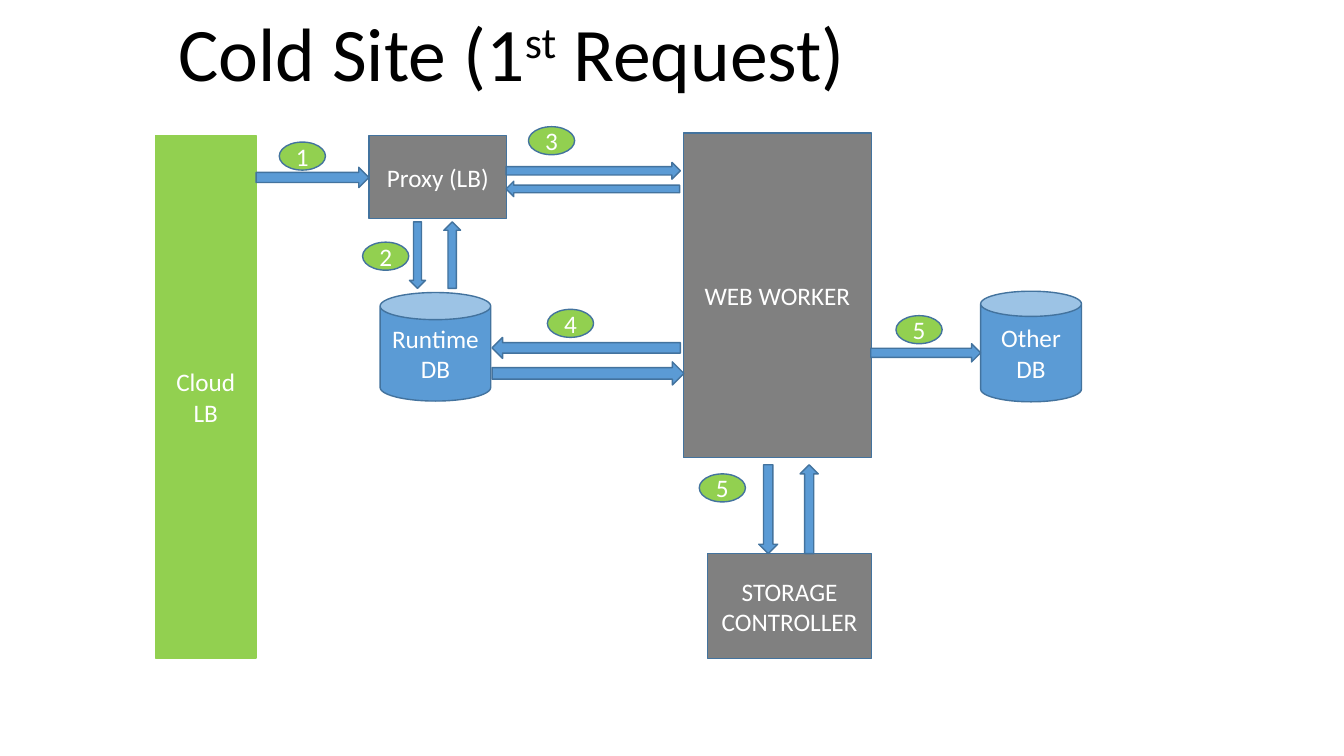
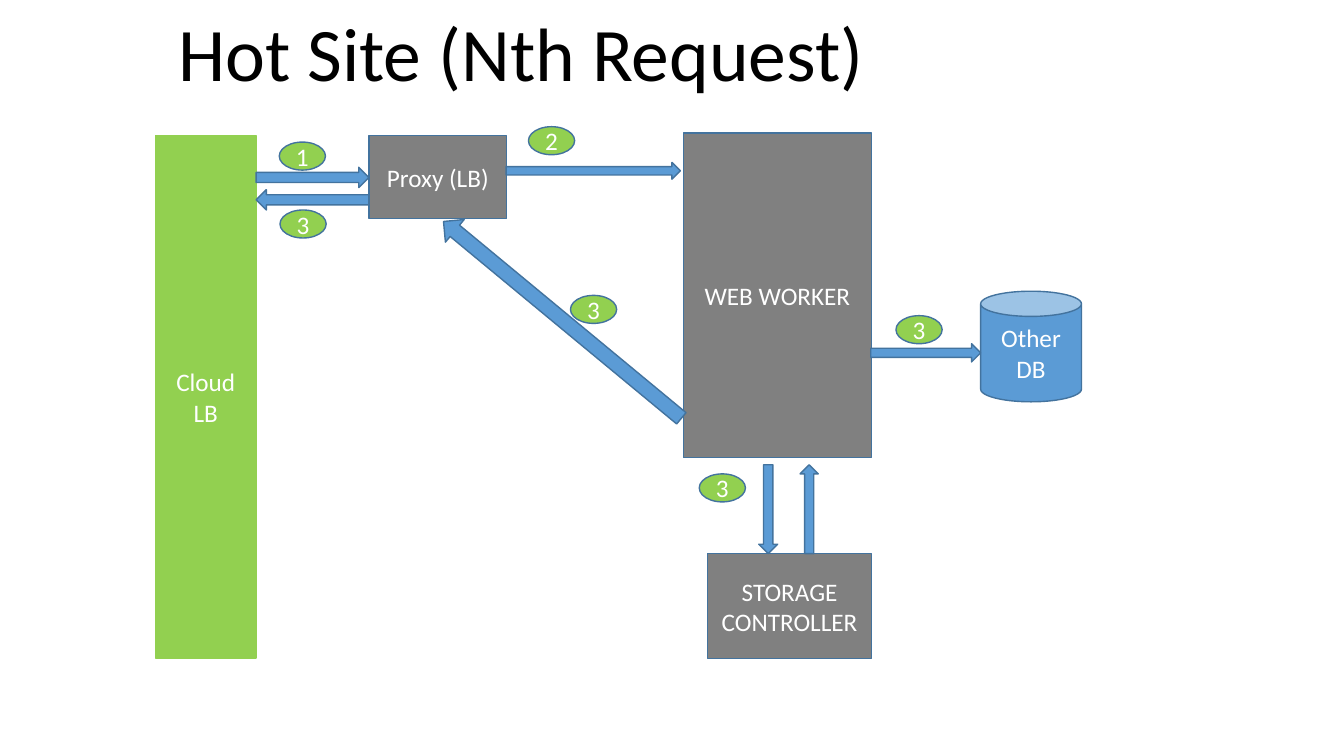
from pptx import Presentation
from pptx.dml.color import RGBColor
from pptx.enum.shapes import MSO_SHAPE
from pptx.enum.text import MSO_ANCHOR, MSO_AUTO_SIZE, PP_ALIGN
from pptx.util import Pt

# Shared look
FONT = "Calibri"
GREEN, GRAY, BLUE, OUTLINE = "92D050", "808080", "5B9BD5", "43739E"
WHITE, BLACK = "FFFFFF", "000000"
TITLE_PLACE = (120, 29.5, 526.5, 44)
BADGE_SIZE = (33, 20)
RIGHT, LEFT = MSO_SHAPE.RIGHT_ARROW, MSO_SHAPE.LEFT_ARROW
UP, DOWN = MSO_SHAPE.UP_ARROW, MSO_SHAPE.DOWN_ARROW

# Blocks: preset, fill, outline, place, text
SHARED_BLOCKS = [
    (MSO_SHAPE.RECTANGLE, GREEN, GREEN, (111, 97, 72, 373), "Cloud\nLB"),
    (MSO_SHAPE.RECTANGLE, GRAY, OUTLINE, (263.5, 97, 98.5, 59), "Proxy (LB)"),
    (MSO_SHAPE.RECTANGLE, GRAY, OUTLINE, (488, 95, 134.5, 232), "WEB WORKER"),
    (MSO_SHAPE.RECTANGLE, GRAY, OUTLINE, (505.5, 395.5, 117, 75), "STORAGE CONTROLLER"),
    (MSO_SHAPE.CAN, BLUE, OUTLINE, (700.5, 208, 72, 79), "Other DB"),
]
RUNTIME_DB = (MSO_SHAPE.CAN, BLUE, OUTLINE, (271.5, 209, 79, 77.5), "Runtime DB")

# Arrows: preset, place, rotation
SHARED_ARROWS = [
    (RIGHT, (183, 119.5, 80.5, 14.5), 0),
    (RIGHT, (361.5, 116, 124.5, 12), 0),
    (RIGHT, (622, 245.5, 78.5, 13), 0),
    (DOWN, (542, 332, 13.5, 63.5), 0),
    (UP, (571.5, 332, 13, 63.5), 0),
]

# Step badges that both slides have: load balancer, proxy, storage, other database
SHARED_SPOTS = [(199.5, 101.5), (377.5, 90.5), (499.5, 338.5), (640, 225.5)]

SLIDES = [
    {
        "title": [("Cold Site (1", False), ("st", True), (" Request)", False)],
        "blocks": [RUNTIME_DB],
        "steps": "1355",
        "badges": [("2", (259, 173)), ("4", (391, 221))],
        "arrows": [
            (DOWN, (292.5, 158.5, 11.5, 47.5), 0),
            (UP, (317, 158.5, 12, 47.5), 0),
            (LEFT, (361.5, 129.5, 124, 11), 0),
            (LEFT, (351.5, 241, 134.5, 15), 0),
            (RIGHT, (351.5, 258.5, 137, 16.5), 0),
        ],
    },
    {
        "title": [("Hot Site (Nth Request)", False)],
        "blocks": [],
        "steps": "1233",
        "badges": [("3", (407.5, 211)), ("3", (200, 150))],
        "arrows": [
            (LEFT, (291.5, 218, 220.5, 21), 39.6),
            (LEFT, (183, 135.5, 80.5, 14.5), 0),
        ],
    },
]


def add_span(para, text, size=18, color=WHITE, superscript=False):
    span = para.add_run()
    span.text = text
    span.font.name = FONT
    span.font.size = Pt(size)
    span.font.color.rgb = RGBColor.from_string(color)
    if superscript:
        span._r.get_or_add_rPr().set("baseline", "30000")


def add_box(page, preset, place, fill, outline=OUTLINE, text="", rotation=0):
    box = page.shapes.add_shape(preset, *map(Pt, place))
    box.shadow.inherit = False
    box.rotation = rotation
    box.fill.solid()
    box.fill.fore_color.rgb = RGBColor.from_string(fill)
    box.line.color.rgb = RGBColor.from_string(outline)
    box.line.width = Pt(1)
    if text:
        frame = box.text_frame
        frame.word_wrap = True
        frame.vertical_anchor = MSO_ANCHOR.MIDDLE
        for number, line in enumerate(text.split("\n")):
            para = frame.add_paragraph() if number else frame.paragraphs[0]
            para.alignment = PP_ALIGN.CENTER
            add_span(para, line)


deck = Presentation()
deck.slide_width, deck.slide_height = Pt(960), Pt(540)

for content in SLIDES:
    page = deck.slides.add_slide(deck.slide_layouts[5])

    # Title
    title = page.shapes.title
    title.left, title.top, title.width, title.height = map(Pt, TITLE_PLACE)
    frame = title.text_frame
    frame.word_wrap = True
    frame.auto_size = MSO_AUTO_SIZE.NONE
    frame.vertical_anchor = MSO_ANCHOR.BOTTOM
    para = frame.paragraphs[0]
    para.alignment = PP_ALIGN.LEFT
    para.line_spacing = 0.9
    for text, superscript in content["title"]:
        add_span(para, text, size=54, color=BLACK, superscript=superscript)

    # Servers and databases
    for preset, fill, outline, place, text in SHARED_BLOCKS + content["blocks"]:
        add_box(page, preset, place, fill, outline=outline, text=text)

    # Numbered steps
    for step, spot in [*zip(content["steps"], SHARED_SPOTS), *content["badges"]]:
        add_box(page, MSO_SHAPE.OVAL, spot + BADGE_SIZE, GREEN, text=step)

    # Request flow
    for preset, place, rotation in SHARED_ARROWS + content["arrows"]:
        add_box(page, preset, place, BLUE, rotation=rotation)

deck.save("out.pptx")
